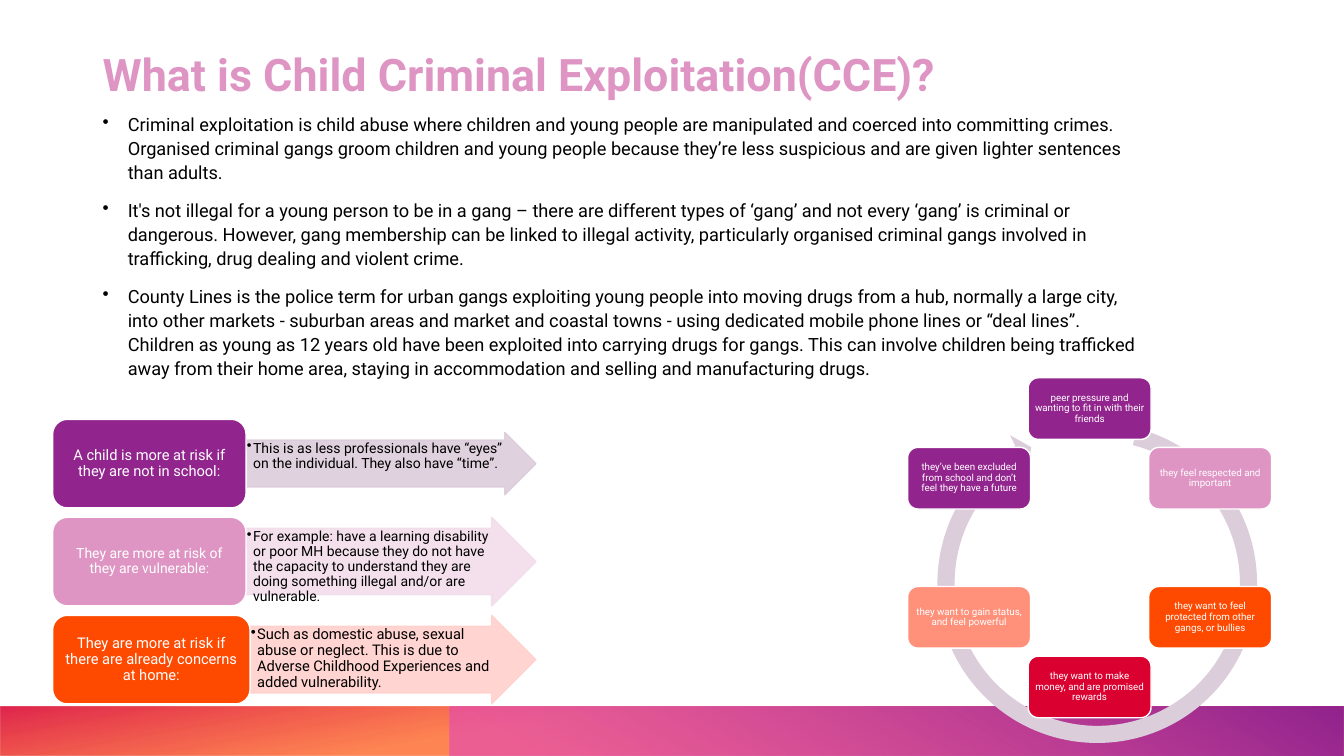
from dataclasses import dataclass
from math import cos, radians, sin

from lxml.etree import SubElement
from pptx import Presentation
from pptx.dml.color import RGBColor
from pptx.enum.shapes import MSO_SHAPE as Shape
from pptx.enum.text import MSO_ANCHOR as Anchor, PP_ALIGN as Align
from pptx.oxml.ns import qn
from pptx.util import Pt

BLACK = RGBColor(0x00, 0x00, 0x00)
WHITE = RGBColor(0xFF, 0xFF, 0xFF)
PURPLE = RGBColor(0x92, 0x24, 0x8E)
PINK = RGBColor(0xDE, 0x95, 0xC4)
ORANGE = RGBColor(0xFE, 0x4A, 0x00)
RED = RGBColor(0xDA, 0x00, 0x2F)
SALMON = RGBColor(0xFF, 0x90, 0x7A)
MAGENTA = RGBColor(0xE3, 0x49, 0xBB)
PALE_PURPLE = RGBColor(0xDC, 0xCD, 0xDB)
PALE_PINK = RGBColor(0xF2, 0xDD, 0xEA)
PALE_ORANGE = RGBColor(0xFF, 0xD0, 0xCC)

POINTS = [
    "Criminal exploitation is child abuse where children and young people are manipulated and coerced into committing crimes. Organised criminal gangs groom children and young people because they’re less suspicious and are given lighter sentences than adults.",
    "It's not illegal for a young person to be in a gang – there are different types of ‘gang’ and not every ‘gang’ is criminal or dangerous. However, gang membership can be linked to illegal activity, particularly organised criminal gangs involved in trafficking, drug dealing and violent crime.",
    "County Lines is the police term for urban gangs exploiting young people into moving drugs from a hub, normally a large city, into other markets - suburban areas and market and coastal towns - using dedicated mobile phone lines or “deal lines”. Children as young as 12 years old have been exploited into carrying drugs for gangs. This can involve children being trafficked away from their home area, staying in accommodation and selling and manufacturing drugs.",
]
RISKS = [
    ("A child is more at risk if they are not in school:", 10.5, PURPLE, 138.2,
     "This is as less professionals have “eyes” on the individual. They also have “time”.",
     10, PALE_PURPLE, 44.6),
    ("They are more at risk of they are vulnerable:", 10, PINK, 138.2,
     "For example: have a learning disability or poor MH because they do not have the capacity to understand they are doing something illegal and/or are vulnerable.",
     10, PALE_PINK, 63.3),
    ("They are more at risk if there are already concerns at home:", 10.5, ORANGE, 141.1,
     "Such as domestic abuse, sexual abuse or neglect. This is due to Adverse Childhood Experiences and added vulnerability.",
     10.5, PALE_ORANGE, 63.3),
]
REASONS = [
    ("peer pressure and wanting to fit in with their friends", PURPLE),
    ("they feel respected and important", PINK),
    ("they want to feel protected from other gangs, or bullies", ORANGE),
    ("they want to make money, and are promised rewards", RED),
    ("they want to gain status, and feel powerful", SALMON),
    ("they’ve been excluded from school and don’t feel they have a future", PURPLE),
]


@dataclass
class Painter:
    """Draws styled elements on one slide."""
    page: object
    font: str = "Roboto"

    def fill_text(self, box, texts, size, color, insets=(7.2, 3.6), anchor=Anchor.TOP,
                  align=Align.LEFT, spacing=0.9, before=0, bold=False, indent=0):
        frame = box.text_frame
        frame.word_wrap = True
        frame.vertical_anchor = anchor
        frame.margin_left = frame.margin_right = Pt(insets[0])
        frame.margin_top = frame.margin_bottom = Pt(insets[1])
        frame.text = "\n".join(texts)
        for para in frame.paragraphs:
            para.alignment = align
            para.line_spacing = spacing
            para.space_before = Pt(before)
            for span in para.runs:
                span.font.name = self.font
                span.font.size = Pt(size)
                span.font.bold = bold
                span.font.color.rgb = color
            if indent:
                self.bullet(para, indent)

    def bullet(self, para, indent):
        props = para._p.get_or_add_pPr()
        props.set("marL", str(Pt(indent)))
        props.set("indent", str(-Pt(indent)))
        SubElement(props, qn("a:buChar")).set("char", "•")

    def textbox(self, left, top, width, height, texts, size, color, **style):
        box = self.page.shapes.add_textbox(Pt(left), Pt(top), Pt(width), Pt(height))
        self.fill_text(box, texts, size, color, **style)

    def shape(self, kind, left, top, width, height, fill=None, line=None, adjust=()):
        shape = self.page.shapes.add_shape(kind, Pt(left), Pt(top), Pt(width), Pt(height))
        shape.shadow.inherit = False
        for index, value in enumerate(adjust):
            shape.adjustments[index] = value
        if fill is not None:
            shape.fill.solid()
            shape.fill.fore_color.rgb = fill
        if line is None:
            shape.line.fill.background()
        else:
            shape.line.color.rgb = line
            shape.line.width = Pt(1)
        return shape

    def fade(self, shape, *opacities):
        for color, percent in zip(shape.element.spPr.iter(qn("a:srgbClr")), opacities):
            SubElement(color, qn("a:alpha")).set("val", str(percent * 1000))

    def band(self, left, width, angle, stops, rotation=0):
        band = self.shape(Shape.RECTANGLE, left, 504.7, width, 35.3)
        band.rotation = rotation
        band.element.spPr.xfrm.set("flipH", "1")
        band.fill.gradient()
        band.fill.gradient_angle = 360 - angle
        for stop, (position, color, _) in zip(band.fill.gradient_stops, stops):
            stop.position = position
            stop.color.rgb = color
        self.fade(band, *[opacity for _, _, opacity in stops])

    def card(self, left, top, width, height, text, size, fill, insets):
        card = self.shape(Shape.ROUNDED_RECTANGLE, left, top, width, height, fill, WHITE)
        self.fill_text(card, [text], size, WHITE, insets=insets,
                       anchor=Anchor.MIDDLE, align=Align.CENTER)

    def arrow(self, left, top, width, height, text, size, fill):
        arrow = self.shape(Shape.RIGHT_ARROW, left, top, width, height, fill, fill, (0.75, 0.5))
        self.fade(arrow, 90, 90)
        self.fill_text(arrow, [text], size, BLACK, insets=(0.5, 0.5), indent=4.5)


def main():
    deck = Presentation()
    deck.slide_width, deck.slide_height = Pt(960), Pt(540)
    painter = Painter(deck.slides.add_slide(deck.slide_layouts[6]))

    painter.band(0, 960, 100, [(0.62, ORANGE, 67), (1, RED, 85)], rotation=180)
    painter.band(321, 639, 240, [(0.09, MAGENTA, 62), (0.99, PURPLE, 100)])
    painter.textbox(66.2, 0, 786.2, 75.6, ["What is Child Criminal Exploitation(CCE)?"],
                    32, PINK, anchor=Anchor.BOTTOM, bold=True)
    painter.textbox(66.2, 75.6, 755.3, 213.8, POINTS, 13, BLACK,
                    spacing=1.1, before=10, indent=18)

    left, right, height = 37.6, 382.8, 63.3
    for row, (label, label_size, fill, width, detail, size, pale, thick) in enumerate(RISKS):
        top = 299.5 + 70 * row
        start = left + width
        painter.arrow(start, top + (height - thick) / 2, right - start, thick, detail, size, pale)
        painter.card(left, top, width, height, label, label_size, fill, (3.4, 1.6))

    painter.shape(Shape.CIRCULAR_ARROW, 661, 293.8, 245.5, 245.5, PALE_PURPLE,
                  adjust=(0.05, 3.13, 143.32, 170.67, 0.06))
    center_x, center_y, radius = 778.3, 391.3, 99.4
    width, height = 87.8, 44
    for step, (reason, fill) in enumerate(REASONS):
        angle = radians(60 * step)
        painter.card(center_x + radius * sin(angle) - width / 2,
                     center_y - radius * cos(angle) - height / 2,
                     width, height, reason, 7, fill, (2.1, 2.1))

    deck.save("out.pptx")


if __name__ == "__main__":
    main()
